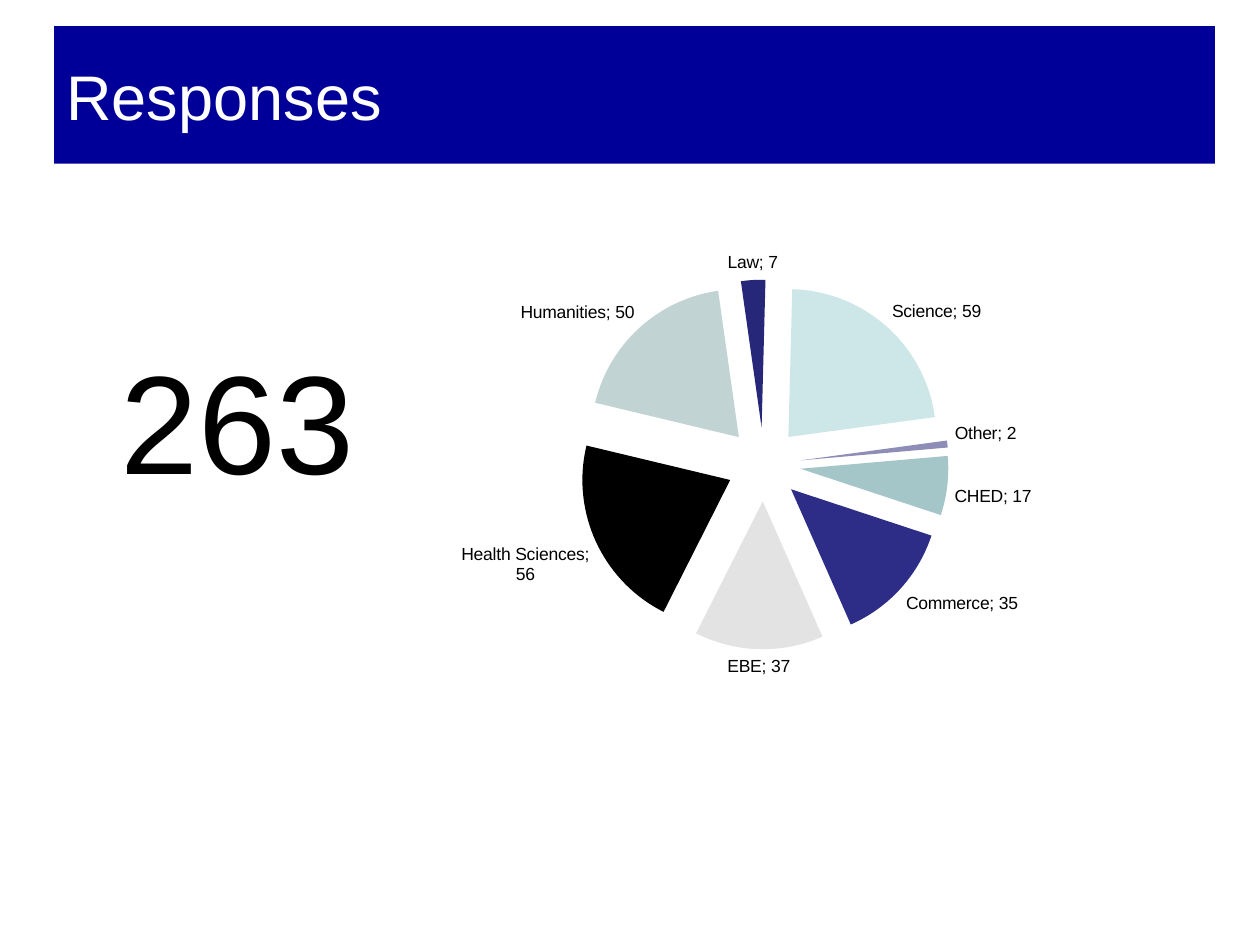
from dataclasses import dataclass

from lxml import etree
from pptx import Presentation
from pptx.chart.data import CategoryChartData
from pptx.dml.color import RGBColor
from pptx.enum.chart import XL_CHART_TYPE, XL_LABEL_POSITION
from pptx.enum.shapes import MSO_SHAPE
from pptx.enum.text import MSO_ANCHOR, PP_ALIGN
from pptx.oxml import parse_xml
from pptx.util import Cm, Pt

PIE = XL_CHART_TYPE.PIE
OUTSIDE_END = XL_LABEL_POSITION.OUTSIDE_END
RECTANGLE = MSO_SHAPE.RECTANGLE
MIDDLE = MSO_ANCHOR.MIDDLE
LEFT, CENTER = PP_ALIGN.LEFT, PP_ALIGN.CENTER
CHART_NS = "http://schemas.openxmlformats.org/drawingml/2006/chart"


@dataclass(frozen=True)
class Theme:
    """Colours, font and type sizes of the slide."""
    font: str = "Arial"
    banner: str = "000099"
    banner_text: str = "FFFFFF"
    text: str = "000000"
    title_size: int = 36
    total_size: int = 80
    label_size: int = 10


THEME = Theme()

RESPONSES = [
    ("CHED", 17, "A5C6C9"),
    ("Commerce", 35, "2D2D87"),
    ("EBE", 37, "E3E3E3"),
    ("Health Sciences", 56, "000000"),
    ("Humanities", 50, "C2D3D4"),
    ("Law", 7, "272779"),
    ("Science", 59, "CDE7E8"),
    ("Other", 2, "8D8DB8"),
]


def style_font(font, size, color):
    """Apply the theme font with a size and colour."""
    font.name = THEME.font
    font.size = Pt(size)
    font.color.rgb = RGBColor.from_string(color)


def add_banner(slide, box, title):
    """Fill the box with the title banner."""
    banner = slide.shapes.add_shape(RECTANGLE, *box)
    banner.shadow.inherit = False
    banner.fill.solid()
    banner.fill.fore_color.rgb = RGBColor.from_string(THEME.banner)
    banner.line.fill.background()
    frame = banner.text_frame
    frame.vertical_anchor = MIDDLE
    heading = frame.paragraphs[0]
    heading.text = title
    heading.alignment = LEFT
    style_font(heading.font, THEME.title_size, THEME.banner_text)


def add_total(slide, box, total):
    """Place the large total centred in the box."""
    frame = slide.shapes.add_textbox(*box).text_frame
    frame.word_wrap = True
    frame.margin_top = Cm(0.43)
    figure = frame.paragraphs[0]
    figure.text = str(total)
    figure.alignment = CENTER
    style_font(figure.font, THEME.total_size, THEME.text)


def shape_pie(chart, start_angle, explosion, plot_box):
    """Turn and explode the pie and fix its plot area within the chart."""
    plot_area = chart.plots[0]._element.getparent()
    for old_layout in plot_area.findall(f"{{{CHART_NS}}}layout"):
        plot_area.remove(old_layout)
    modes = '<c:layoutTarget val="inner"/><c:xMode val="edge"/><c:yMode val="edge"/>'
    edges = "".join(f'<c:{edge} val="{share}"/>' for edge, share in zip("xywh", plot_box))
    plot_area.insert(0, parse_xml(
        f'<c:layout xmlns:c="{CHART_NS}"><c:manualLayout>{modes}{edges}'
        "</c:manualLayout></c:layout>"))
    pie = chart.plots[0]._element
    for old_angle in pie.findall(f"{{{CHART_NS}}}firstSliceAng"):
        pie.remove(old_angle)
    etree.SubElement(pie, f"{{{CHART_NS}}}firstSliceAng").set("val", str(start_angle))
    series = pie.find(f"{{{CHART_NS}}}ser")
    offset = etree.Element(f"{{{CHART_NS}}}explosion")
    offset.set("val", str(explosion))
    series.find(f"{{{CHART_NS}}}tx").addnext(offset)


def add_faculty_pie(slide, box, responses):
    """Draw the exploded pie of responses by faculty in the box."""
    faculties, counts, colors = zip(*responses)
    pie_data = CategoryChartData()
    pie_data.categories = faculties
    pie_data.add_series("Series 1", counts)
    chart = slide.shapes.add_chart(PIE, *box, pie_data).chart
    chart.has_legend = False
    chart.has_title = False
    style_font(chart.font, THEME.label_size, THEME.text)
    plot = chart.plots[0]
    plot.vary_by_categories = True
    plot.has_data_labels = True
    labels = plot.data_labels
    labels.show_category_name = True
    labels.show_value = True
    labels.show_percentage = False
    labels.position = OUTSIDE_END
    style_font(labels.font, THEME.label_size, THEME.text)
    shape_pie(chart, 85, 25, (0.28, 0.1, 0.5, 0.81))
    for index, color in enumerate(colors):
        slice_format = plot.series[0].points[index].format
        slice_format.fill.solid()
        slice_format.fill.fore_color.rgb = RGBColor.from_string(color)
        slice_format.line.fill.background()


def main():
    """Build and save the responses slide."""
    deck = Presentation()
    deck.slide_width, deck.slide_height = Cm(25.4), Cm(19.05)
    slide = deck.slides.add_slide(deck.slide_layouts[6])
    add_banner(slide, (Cm(1.09), Cm(0.53), Cm(23.4), Cm(2.77)), "Responses")
    add_total(slide, (Cm(1.09), Cm(6.32), Cm(7.4), Cm(4)),
              sum(count for _, count, _ in RESPONSES))
    add_faculty_pie(slide, (Cm(7.5), Cm(4.72), Cm(14.9), Cm(9.2)), RESPONSES)
    deck.save("out.pptx")


if __name__ == "__main__":
    main()
